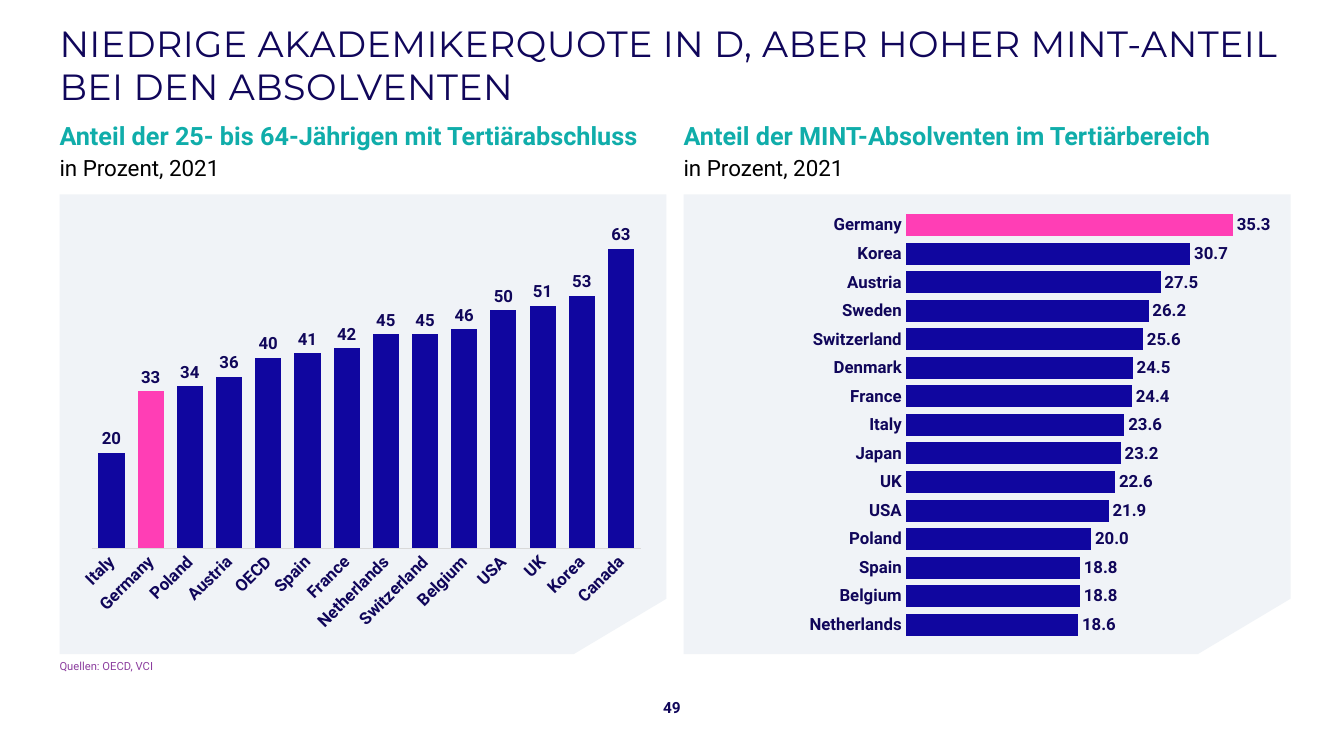
from lxml import etree
from pptx import Presentation
from pptx import util as u
from pptx.chart.data import CategoryChartData
from pptx.dml.color import RGBColor
from pptx.enum import chart as charts, text
from pptx.oxml import parse_xml
from pptx.oxml.ns import nsdecls, qn

COLORS = {"navy": "10065A", "bar": "10069F", "accent": "FF3EB5", "teal": "10ADAA",
          "card": "F0F3F7", "source": "8C3E9F", "black": "000000", "axis": "D9D9D9"}
WIDTH, HEIGHT = 13.33, 7.5
MARGIN, CARD_WIDTH, GUTTER = 0.59, 6.02, 0.17
COLUMNS = [MARGIN + number * (CARD_WIDTH + GUTTER) for number in range(2)]
CARD_TOP, CARD_HEIGHT = 1.93, 4.56
CUT_WIDTH, CUT_HEIGHT = 0.92, 0.55
HEADINGS = ["Anteil der 25- bis 64-Jährigen mit Tertiärabschluss",
            "Anteil der MINT-Absolventen im Tertiärbereich"]
GRADUATES = {"Italy": 20, "Germany": 33, "Poland": 34, "Austria": 36, "OECD": 40,
             "Spain": 41, "France": 42, "Netherlands": 45, "Switzerland": 45,
             "Belgium": 46, "USA": 50, "UK": 51, "Korea": 53, "Canada": 63}
STEM_SHARES = {"Netherlands": 18.6, "Belgium": 18.8, "Spain": 18.8, "Poland": 20,
               "USA": 21.9, "UK": 22.6, "Japan": 23.2, "Italy": 23.6, "France": 24.4,
               "Denmark": 24.5, "Switzerland": 25.6, "Sweden": 26.2, "Austria": 27.5,
               "Korea": 30.7, "Germany": 35.3}


def color(name):
    """Return the named colour."""
    return RGBColor.from_string(COLORS[name])


def style_font(font, size, name, bold=False, family="Roboto"):
    """Set family, size, weight and colour of a font."""
    font.name, font.size, font.bold = family, u.Pt(size), bold
    font.color.rgb = color(name)


def write(box, area, words, size, name, bold=False, family="Roboto",
          align=text.PP_ALIGN.LEFT, anchor=text.MSO_ANCHOR.TOP):
    """Place a text holder and fill it with one formatted paragraph."""
    box.left, box.top, box.width, box.height = map(u.Inches, area)
    frame = box.text_frame
    frame.text = words
    frame.word_wrap, frame.auto_size = True, text.MSO_AUTO_SIZE.NONE
    frame.vertical_anchor = anchor
    frame.margin_left = frame.margin_right = frame.margin_top = frame.margin_bottom = 0
    para = frame.paragraphs[0]
    para.alignment, para.space_before = align, u.Pt(0)
    properties = para._p.get_or_add_pPr()
    properties.set("marL", "0")
    properties.set("indent", "0")
    etree.SubElement(properties, qn("a:buNone"))
    span = para.runs[0]
    style_font(span.font, size, name, bold, family)
    return span


def add_card(page, left):
    """Draw a panel with its lower right corner cut off."""
    right, bottom = left + CARD_WIDTH, CARD_TOP + CARD_HEIGHT
    corners = [(right, CARD_TOP), (right, bottom - CUT_HEIGHT),
               (right - CUT_WIDTH, bottom), (left, bottom)]
    builder = page.shapes.build_freeform(u.Inches(left), u.Inches(CARD_TOP))
    builder.add_line_segments([(u.Inches(x), u.Inches(y)) for x, y in corners])
    card = builder.convert_to_shape()
    card.shadow.inherit = False
    card.fill.solid()
    card.fill.fore_color.rgb = color("card")
    card.line.fill.background()


def set_plot_area(chart, shares):
    """Fix the inner plot area as shares of the chart's size."""
    plot_area = chart._chartSpace.chart.plotArea
    for layout in plot_area.findall(qn("c:layout")):
        plot_area.remove(layout)
    sizes = "".join(f'<c:{tag} val="{share}"/>' for tag, share in zip("xywh", shares))
    plot_area.insert(0, parse_xml(
        f'<c:layout {nsdecls("c")}><c:manualLayout><c:layoutTarget val="inner"/>'
        f'<c:xMode val="edge"/><c:yMode val="edge"/>{sizes}</c:manualLayout></c:layout>'))


def add_bars(page, left, kind, values, maximum, gap, number_format, shares):
    """Add a bar chart that highlights Germany, and return it."""
    data = CategoryChartData(number_format=number_format)
    data.categories = list(values)
    data.add_series("Series 1", list(values.values()))
    chart = page.shapes.add_chart(kind, u.Inches(left + 0.09), u.Inches(2.05),
                                  u.Inches(5.79), u.Inches(4.29), data).chart
    chart.has_legend = chart.has_title = False
    style_font(chart.font, 12, "navy", True)
    set_plot_area(chart, shares)
    plot = chart.plots[0]
    plot.gap_width, plot.vary_by_categories = gap, False
    plot.has_data_labels = True
    labels = plot.data_labels
    labels.show_value, labels.position = True, charts.XL_LABEL_POSITION.OUTSIDE_END
    labels.number_format, labels.number_format_is_linked = number_format, False
    style_font(labels.font, 12, "navy", True)
    series = plot.series[0]
    highlight = series.points[list(values).index("Germany")]
    for target, name in ((series, "bar"), (highlight, "accent")):
        target.format.fill.solid()
        target.format.fill.fore_color.rgb = color(name)
    scale = chart.value_axis
    scale.minimum_scale, scale.maximum_scale = 0, maximum
    scale.has_major_gridlines = scale.visible = False
    axis = chart.category_axis
    axis.has_major_gridlines = False
    axis.major_tick_mark = charts.XL_TICK_MARK.NONE
    axis.format.line.fill.background()
    style_font(axis.tick_labels.font, 12, "navy", True)
    return chart


def slant_labels(axis):
    """Show the axis line and turn its labels by 45 degrees."""
    axis.format.line.color.rgb = color("axis")
    axis.format.line.width = u.Pt(0.75)
    axis._element.find(qn("c:txPr")).find(qn("a:bodyPr")).set("rot", "-2700000")


def main():
    """Build the slide and save it."""
    deck = Presentation()
    deck.slide_width, deck.slide_height = u.Inches(WIDTH), u.Inches(HEIGHT)
    page = deck.slides.add_slide(deck.slide_layouts.get_by_name("Comparison"))
    holders = {box.placeholder_format.idx: box for box in page.placeholders}
    title = write(holders[0], (MARGIN, 0.15, 12.2, 0.98),
                  "NIEDRIGE AKADEMIKERQUOTE IN D, ABER HOHER MINT-ANTEIL BEI DEN ABSOLVENTEN",
                  26, "navy", family="Montserrat", anchor=text.MSO_ANCHOR.MIDDLE)
    title.font._element.set("spc", "30")
    for number, (left, heading) in enumerate(zip(COLUMNS, HEADINGS)):
        add_card(page, left)
        write(holders[2 * number + 1], (left, 1.19, CARD_WIDTH, 0.31), heading,
              18, "teal", True)
        write(holders[2 * number + 2], (left, 1.53, CARD_WIDTH, 0.28),
              "in Prozent, 2021", 16, "black")
    columns = add_bars(page, COLUMNS[0], charts.XL_CHART_TYPE.COLUMN_CLUSTERED,
                       GRADUATES, 70, 50, "#,##0", (0.04, 0.02, 0.94, 0.77))
    slant_labels(columns.category_axis)
    add_bars(page, COLUMNS[1], charts.XL_CHART_TYPE.BAR_CLUSTERED,
             STEM_SHARES, 40, 30, "0.0", (0.365, 0.01, 0.635, 0.99))
    write(page.shapes.add_textbox(0, 0, 0, 0), (MARGIN, 6.54, 5.08, 0.13),
          "Quellen: OECD, VCI", 8, "source")
    write(page.shapes.add_textbox(0, 0, 0, 0), ((WIDTH - 0.59) / 2, 6.88, 0.59, 0.28),
          "49", 11, "navy", True, align=text.PP_ALIGN.CENTER,
          anchor=text.MSO_ANCHOR.MIDDLE)
    deck.save("out.pptx")


if __name__ == "__main__":
    main()
